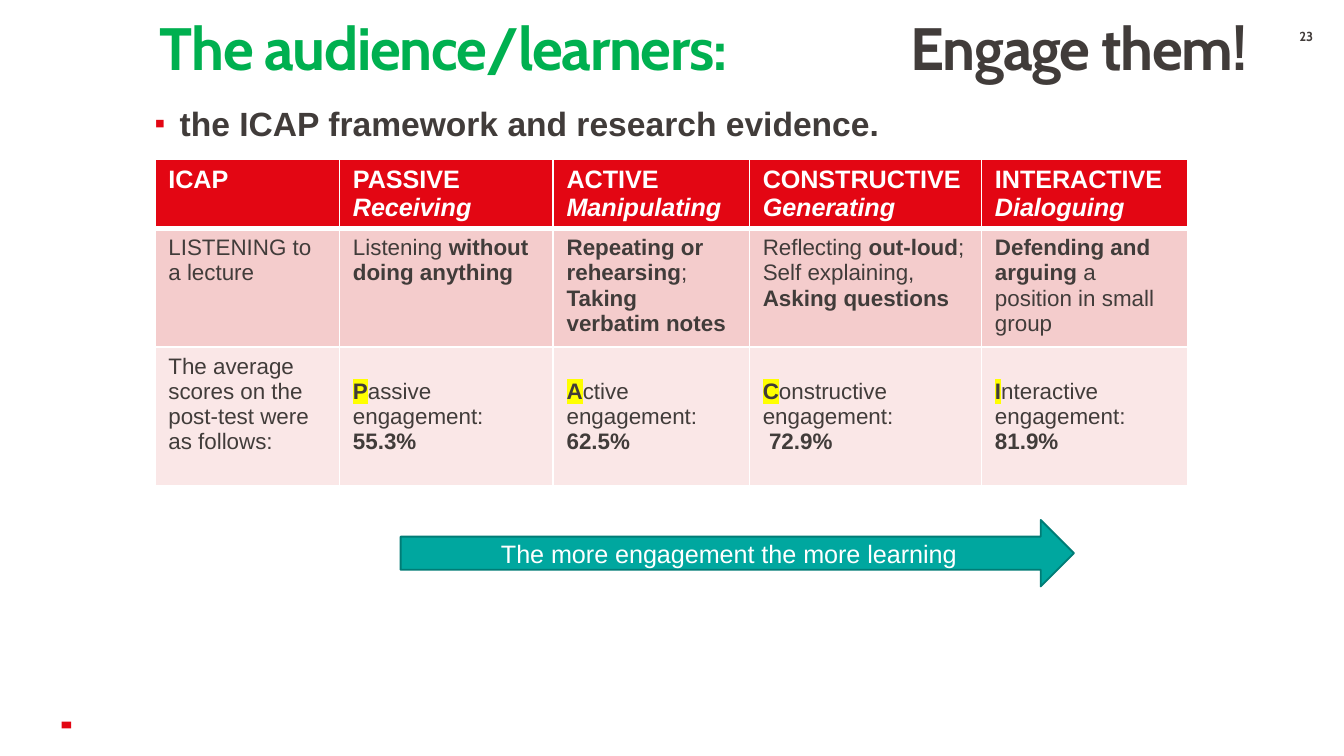
"""Build the slide on engaging learners with the ICAP framework."""
from dataclasses import dataclass

from pptx import Presentation
from pptx.dml.color import RGBColor
from pptx.enum.shapes import MSO_SHAPE
from pptx.enum.text import MSO_ANCHOR, MSO_AUTO_SIZE, PP_ALIGN
from pptx.oxml import parse_xml
from pptx.oxml.ns import nsdecls, qn
from pptx.util import Pt


@dataclass(frozen=True)
class Theme:
    """Colours, fonts and type sizes."""
    red: str = "E30613"
    green: str = "00B050"
    ink: str = "413C3A"
    white: str = "FFFFFF"
    rose: str = "F4CCCC"
    blush: str = "FAE7E7"
    teal: str = "00A79F"
    dark_teal: str = "007C76"
    yellow: str = "FFFF00"
    heading_font: str = "Cabin"
    body_font: str = "Arial"
    title_size: float = 32
    lead_size: float = 18
    header_size: float = 13.5
    cell_size: float = 12
    number_size: float = 7


THEME = Theme()


@dataclass(frozen=True)
class Span:
    """A stretch of text with one format."""
    text: str
    bold: bool = False
    italic: bool = False
    highlight: str = ""


@dataclass(frozen=True)
class Row:
    """A table row and its look."""
    height: float
    fill: str
    color: str
    size: float
    cells: list
    lower_border: float = 1
    drop: float = 0


def rgb(value: str) -> RGBColor:
    """Turn a hex value into a colour."""
    return RGBColor.from_string(value)


def apply(target, values: dict) -> None:
    """Set each named attribute on the target."""
    for name, value in values.items():
        setattr(target, name, value)


def write(paragraph, span: Span, size: float, color: str, font: str = THEME.body_font) -> None:
    """Add a span to the paragraph, turning newlines into line breaks."""
    for index, piece in enumerate(span.text.split("\n")):
        if index:
            paragraph.add_line_break()
        if not piece:
            continue
        run = paragraph.add_run()
        run.text = piece
        apply(run.font, {"name": font, "size": Pt(size), "bold": span.bold, "italic": span.italic})
        run.font.color.rgb = rgb(color)
        if span.highlight:
            mark = f'<a:highlight {nsdecls("a")}><a:srgbClr val="{span.highlight}"/></a:highlight>'
            run.font._element.find(qn("a:solidFill")).addnext(parse_xml(mark))


def set_frame(frame, margins: tuple, anchor=MSO_ANCHOR.TOP) -> None:
    """Set wrapping, anchor and margins of a text frame."""
    left, top, right, bottom = map(Pt, margins)
    apply(frame, {"word_wrap": True, "auto_size": MSO_AUTO_SIZE.NONE, "vertical_anchor": anchor,
                  "margin_left": left, "margin_top": top,
                  "margin_right": right, "margin_bottom": bottom})


def add_box(slide, bounds: tuple, margins: tuple):
    """Add a text box and return its first paragraph."""
    frame = slide.shapes.add_textbox(*map(Pt, bounds)).text_frame
    set_frame(frame, margins)
    return frame.paragraphs[0]


def add_solid(slide, kind, bounds: tuple, fill: str):
    """Add a flat shape without an outline."""
    shape = slide.shapes.add_shape(kind, *map(Pt, bounds))
    shape.shadow.inherit = False
    shape.fill.solid()
    shape.fill.fore_color.rgb = rgb(fill)
    shape.line.fill.background()
    return shape


def set_title(slide) -> None:
    """Place and write the two-part title."""
    title = slide.shapes.title
    apply(title, {"left": Pt(71.3), "top": Pt(10), "width": Pt(613.4), "height": Pt(44)})
    set_frame(title.text_frame, (14.4, 0, 5.8, 3.6))
    paragraph = title.text_frame.paragraphs[0]
    paragraph._p.get_or_add_pPr().append(parse_xml(
        f'<a:tabLst {nsdecls("a")}><a:tab pos="{Pt(402)}" algn="l"/></a:tabLst>'))
    apply(paragraph, {"alignment": PP_ALIGN.LEFT, "line_spacing": 0.9})
    for text, color in (("The audience/learners:\t", THEME.green), ("Engage them!", THEME.ink)):
        write(paragraph, Span(text, bold=True), THEME.title_size, color, THEME.heading_font)
    for run in paragraph.runs:
        run.font._element.set("spc", "-70")


def add_lead(slide) -> None:
    """Add the bulleted lead line."""
    paragraph = add_box(slide, (68.4, 54, 608.4, 282), (14.4, 3.6, 7.2, 3.6))
    properties = paragraph._p.get_or_add_pPr()
    properties.set("marL", str(Pt(13.5)))
    properties.set("indent", str(Pt(-13.5)))
    for bullet in (f'<a:buClr {nsdecls("a")}><a:srgbClr val="{THEME.red}"/></a:buClr>',
                   f'<a:buSzPct {nsdecls("a")} val="90000"/>',
                   f'<a:buFont {nsdecls("a")} typeface="{THEME.body_font}"/>',
                   f'<a:buChar {nsdecls("a")} char="▪"/>'):
        properties.append(parse_xml(bullet))
    paragraph.line_spacing = 0.9
    write(paragraph, Span("the ICAP framework and research evidence.", bold=True),
          THEME.lead_size, THEME.ink)


def set_borders(cell, upper: float, lower: float) -> None:
    """Draw white borders around a cell."""
    properties = cell._tc.get_or_add_tcPr()
    for side, width in (("L", 1), ("R", 1), ("T", upper), ("B", lower)):
        properties.append(parse_xml(
            f'<a:ln{side} {nsdecls("a")} w="{Pt(width)}"><a:solidFill>'
            f'<a:srgbClr val="{THEME.white}"/></a:solidFill></a:ln{side}>'))


def add_table(slide, left: float, top: float, widths: list, rows: list) -> None:
    """Add the table of engagement modes."""
    bounds = (left, top, sum(widths), sum(row.height for row in rows))
    table = slide.shapes.add_table(len(rows), len(widths), *map(Pt, bounds)).table
    for column, width in zip(table.columns, widths):
        column.width = Pt(width)
    upper = 1
    for row_index, row in enumerate(rows):
        table.rows[row_index].height = Pt(row.height)
        for column_index, spans in enumerate(row.cells):
            cell = table.cell(row_index, column_index)
            set_borders(cell, upper, row.lower_border)
            cell.fill.solid()
            cell.fill.fore_color.rgb = rgb(row.fill)
            cell.margin_top = Pt(3.6 + (row.drop if column_index else 0))
            for span in spans:
                write(cell.text_frame.paragraphs[0], span, row.size, row.color)
        upper = row.lower_border


def heading(mode: str, action: str) -> list:
    """Return the header spans of a mode."""
    return [Span(f"{mode} ", bold=True), Span(action, bold=True, italic=True)]


def score(mode: str, value: str, gap: str = " ") -> list:
    """Return the score spans of a mode."""
    return [Span(mode[0], bold=True, highlight=THEME.yellow),
            Span(f"{mode[1:]} engagement:{gap}"), Span(value, bold=True)]


ROWS = [
    Row(36.5, THEME.red, THEME.white, THEME.header_size, [
        [Span("ICAP", bold=True)], heading("PASSIVE", "Receiving"),
        heading("ACTIVE", "Manipulating"), heading("CONSTRUCTIVE", "Generating"),
        heading("INTERACTIVE", "Dialoguing")], lower_border=3),
    Row(63.3, THEME.rose, THEME.ink, THEME.cell_size, [
        [Span("LISTENING to a lecture")],
        [Span("Listening "), Span("without doing anything", bold=True)],
        [Span("Repeating or rehearsing", bold=True), Span(";\n"),
         Span("Taking verbatim notes", bold=True)],
        [Span("Reflecting "), Span("out-loud", bold=True), Span(";\nSelf explaining,\n"),
         Span("Asking questions", bold=True)],
        [Span("Defending and arguing ", bold=True), Span("a position in small group")]]),
    Row(74.4, THEME.blush, THEME.ink, THEME.cell_size, [
        [Span("The average scores on the post-test were as follows:")],
        score("Passive", "55.3%"), score("Active", "62.5%"),
        score("Constructive", "72.9%", "\n "), score("Interactive", "81.9%")], drop=13.5),
]


def main() -> None:
    """Build and save the slide."""
    deck = Presentation()
    apply(deck, {"slide_width": Pt(720), "slide_height": Pt(405)})
    slide = deck.slides.add_slide(deck.slide_layouts[5])
    add_solid(slide, MSO_SHAPE.RECTANGLE, (33.8, 385.9, 3.6, 5), THEME.red).rotation = 270
    set_title(slide)
    number = add_box(slide, (679.7, 15.1, 40.3, 13), (7.2, 0, 7.2, 0))
    number.alignment = PP_ALIGN.CENTER
    write(number, Span("23", bold=True), THEME.number_size, THEME.ink, THEME.heading_font)
    add_lead(slide)
    add_table(slide, 83, 85.3, [98.9, 114.5, 105.1, 124.4, 110.7], ROWS)
    arrow = add_solid(slide, MSO_SHAPE.RIGHT_ARROW, (214.6, 278.6, 360.7, 35.6), THEME.teal)
    arrow.line.color.rgb = rgb(THEME.dark_teal)
    arrow.line.width = Pt(1)
    set_frame(arrow.text_frame, (7.2, 3.6, 7.2, 3.6), MSO_ANCHOR.MIDDLE)
    message = arrow.text_frame.paragraphs[0]
    message.alignment = PP_ALIGN.CENTER
    write(message, Span("The more engagement the more learning"), THEME.header_size, THEME.white)
    deck.save("out.pptx")


if __name__ == "__main__":
    main()
